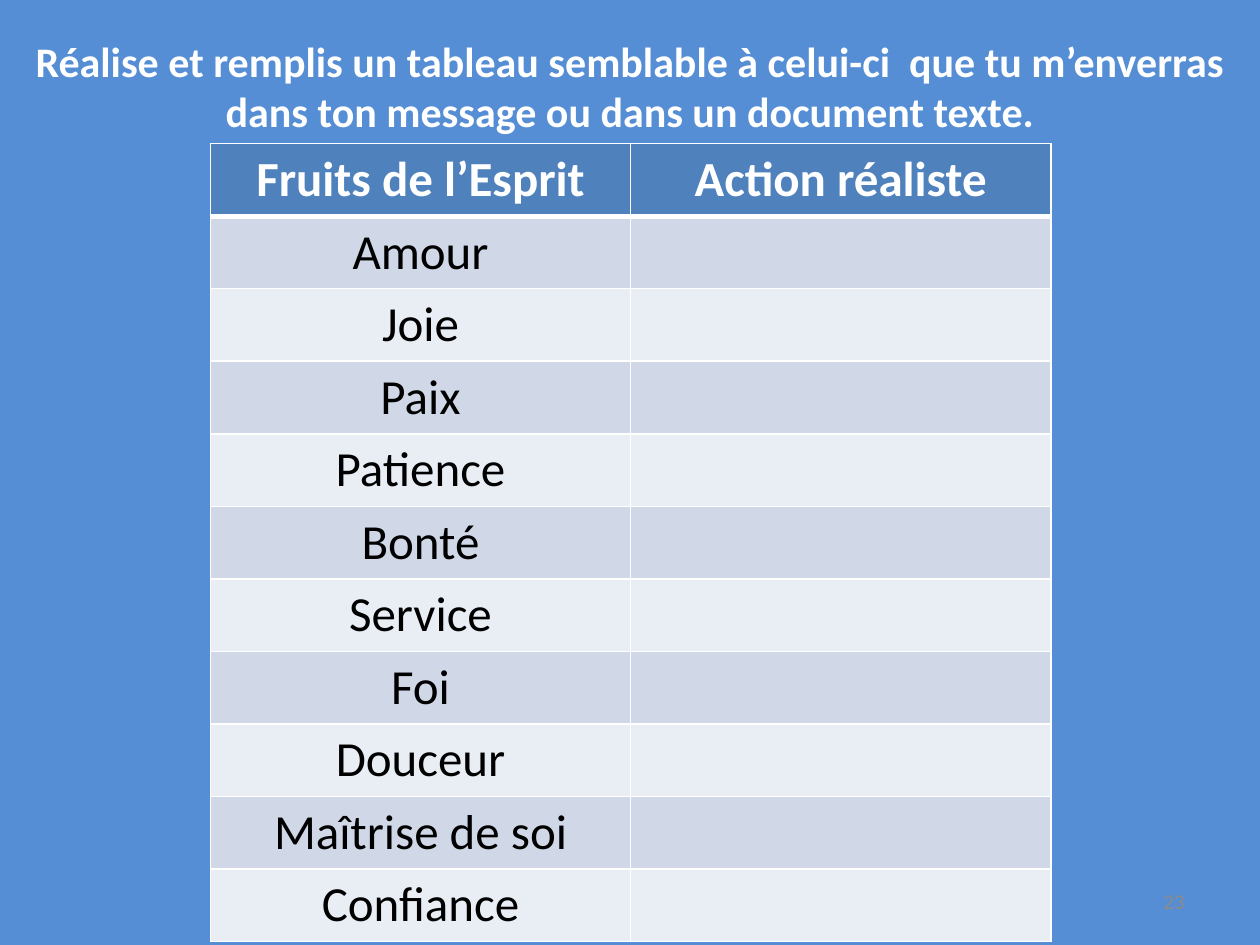
import pptx
import pptx.util
import pptx.dml.color
import pptx.enum.text
import pptx.oxml
import pptx.oxml.ns

Inches = pptx.util.Inches
RGBColor = pptx.dml.color.RGBColor
PP_ALIGN = pptx.enum.text.PP_ALIGN
MSO_ANCHOR = pptx.enum.text.MSO_ANCHOR

BLUE = RGBColor(0x55, 0x8E, 0xD5)
HEADER = RGBColor(0x4F, 0x81, 0xBD)
BANDS = [RGBColor(0xE9, 0xED, 0xF4), RGBColor(0xD0, 0xD8, 0xE8)]
WHITE = RGBColor(0xFF, 0xFF, 0xFF)
BLACK = RGBColor(0, 0, 0)
GREY = RGBColor(0x8B, 0x8B, 0x8B)


def write(tf, text, size=28, color=BLACK, bold=False, align=PP_ALIGN.CENTER):
    p = tf.paragraphs[0]
    p.alignment = align
    r = p.add_run()
    r.text = text
    r.font.name = "Calibri"
    r.font.size = pptx.util.Pt(size)
    r.font.bold = bold
    r.font.color.rgb = color


def add_borders(cell, bottom=1):
    tcPr = cell._tc.get_or_add_tcPr()
    widths = {"lnL": 1, "lnR": 1, "lnT": 1, "lnB": bottom}
    for i, (tag, width) in enumerate(widths.items()):
        # Border lines must come before the cell fill
        tcPr.insert(i, pptx.oxml.parse_xml(
            f'<a:{tag} {pptx.oxml.ns.nsdecls("a")} w="{pptx.util.Pt(width)}">'
            f'<a:solidFill><a:srgbClr val="{WHITE}"/></a:solidFill></a:{tag}>'))


prs = pptx.Presentation()
prs.slide_width, prs.slide_height = Inches(10), Inches(7.5)
s = prs.slides.add_slide(prs.slide_layouts[5])
s.background.fill.solid()
s.background.fill.fore_color.rgb = BLUE

# Instruction
title = s.shapes.title
title.left, title.top = Inches(0), Inches(0.23)
title.width, title.height = Inches(10), Inches(0.91)
tf = title.text_frame
tf.word_wrap = True
tf.auto_size = pptx.enum.text.MSO_AUTO_SIZE.NONE
tf.vertical_anchor = MSO_ANCHOR.TOP
write(tf, "Réalise et remplis un tableau semblable à celui-ci  que tu m’enverras "
      "dans ton message ou dans un document texte.", size=24, color=WHITE, bold=True)

# Table of fruits, with an empty column to fill in
rows = [("Fruits de l’Esprit", "Action réaliste")] + [
    (fruit, "") for fruit in (
        "Amour", "Joie", "Paix", "Patience", "Bonté", "Service",
        "Foi", "Douceur", "Maîtrise de soi", "Confiance")]
table = s.shapes.add_table(len(rows), 2, Inches(1.67), Inches(1.14),
                           Inches(6.67), Inches(6.23)).table
for i, row in enumerate(rows):
    head = i == 0
    for j, text in enumerate(row):
        cell = table.cell(i, j)
        cell.fill.solid()
        cell.fill.fore_color.rgb = HEADER if head else BANDS[i % 2]
        add_borders(cell, bottom=3 if head else 1)
        if text:
            write(cell.text_frame, text, color=WHITE if head else BLACK, bold=head)

# Slide number
box = s.shapes.add_textbox(Inches(7.17), Inches(6.95), Inches(2.33), Inches(0.4))
box.text_frame.word_wrap = True
box.text_frame.vertical_anchor = MSO_ANCHOR.MIDDLE
write(box.text_frame, "23", size=12, color=GREY, align=PP_ALIGN.RIGHT)

prs.save("out.pptx")
